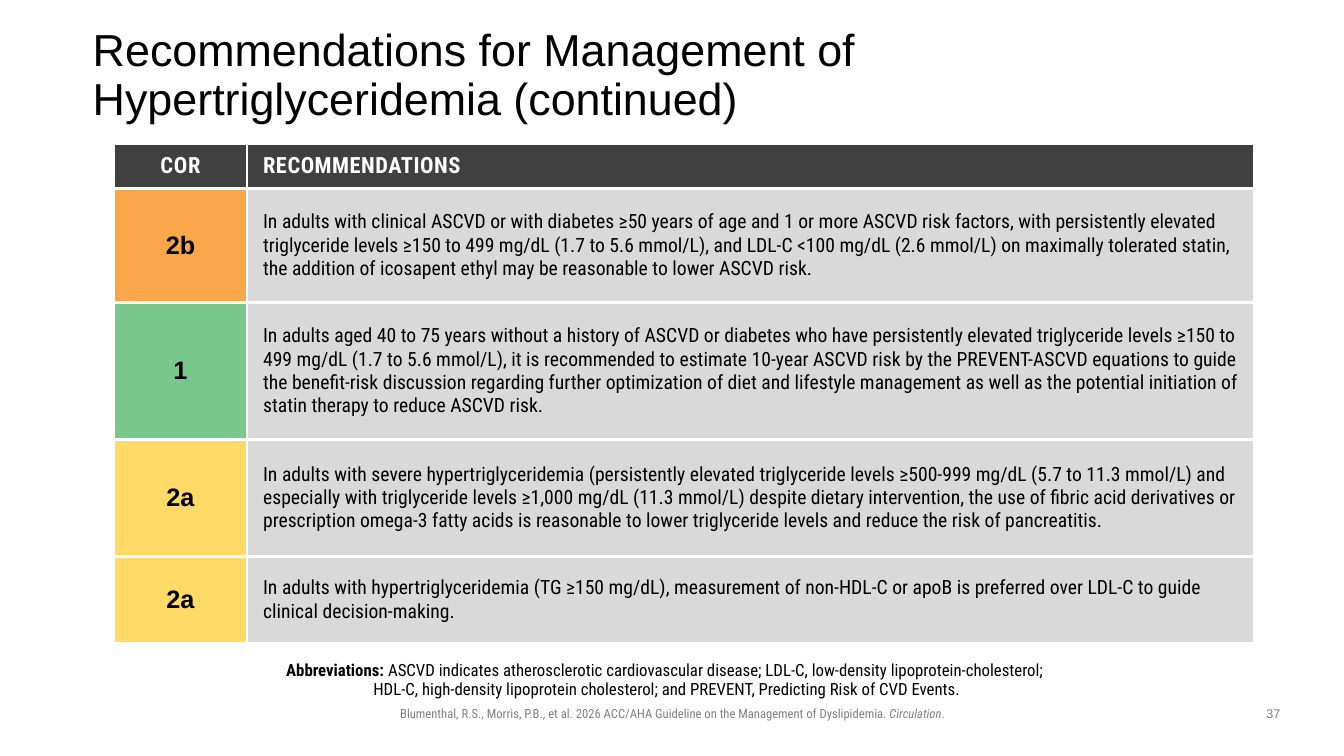
from lxml import etree
from pptx import Presentation
from pptx import util as u
from pptx.dml.color import RGBColor
from pptx.enum import text
from pptx.oxml.ns import qn

COLORS = {"black": "000000", "white": "FFFFFF", "gray": "808080", "header": "404040",
          "body": "D9D9D9", "2b": "FAA74B", "1": "79C78D", "2a": "FFDA68"}
CONDENSED = "Roboto Condensed"

TITLE = "Recommendations for Management of Hypertriglyceridemia (continued)"
HEADERS = ["COR", "RECOMMENDATIONS"]
RECOMMENDATIONS = [
    ("2b", "In adults with clinical ASCVD or with diabetes ≥50 years of age and 1 or more ASCVD risk "
           "factors, with persistently elevated triglyceride levels ≥150 to 499 mg/dL (1.7 to 5.6 mmol/L), "
           "and LDL-C <100 mg/dL (2.6 mmol/L) on maximally tolerated statin, the addition of icosapent "
           "ethyl may be reasonable to lower ASCVD risk."),
    ("1", "In adults aged 40 to 75 years without a history of ASCVD or diabetes who have persistently "
          "elevated triglyceride levels ≥150 to 499 mg/dL (1.7 to 5.6 mmol/L), it is recommended to "
          "estimate 10-year ASCVD risk by the PREVENT-ASCVD equations to guide the benefit-risk discussion "
          "regarding further optimization of diet and lifestyle management as well as the potential "
          "initiation of statin therapy to reduce ASCVD risk."),
    ("2a", "In adults with severe hypertriglyceridemia (persistently elevated triglyceride levels ≥500-999 "
           "mg/dL (5.7 to 11.3 mmol/L) and especially with triglyceride levels ≥1,000 mg/dL (11.3 mmol/L) "
           "despite dietary intervention, the use of fibric acid derivatives or prescription omega-3 fatty "
           "acids is reasonable to lower triglyceride levels and reduce the risk of pancreatitis."),
    ("2a", "In adults with hypertriglyceridemia (TG ≥150 mg/dL), measurement of non-HDL-C or apoB is "
           "preferred over LDL-C to guide clinical decision-making."),
]
ABBREVIATIONS = [
    ("Abbreviations: ", {"bold": True}),
    ("ASCVD indicates atherosclerotic cardiovascular disease; LDL-C, low-density lipoprotein-cholesterol; "
     "\vHDL-C, high-density lipoprotein cholesterol; and PREVENT, Predicting Risk of CVD Events.", {}),
]
CITATION = [
    ("Blumenthal, R.S., Morris, P.B., et al. 2026 ACC/AHA Guideline on the Management of Dyslipidemia. ", {}),
    ("Circulation", {"italic": True}),
    (".", {}),
]
PAGE_NUMBER = "37"

COLUMN_WIDTHS = [1.32, 9.99]
ROW_HEIGHTS = [0.45, 1.13, 1.36, 1.16, 0.86]
CENTER = {"alignment": text.PP_ALIGN.CENTER}
SIDES = ("left", "top", "right", "bottom")


def set_all(target, values):
    for name, value in values.items():
        setattr(target, name, value)


def write(paragraph, runs, size, font, color, layout, bold=False, tracking=0, indent=0):
    set_all(paragraph, layout)
    if indent:
        properties = paragraph._p.get_or_add_pPr()
        properties.set("marL", str(u.Inches(indent)))
        properties.set("indent", "0")
    for words, style in runs:
        for position, line in enumerate(words.split("\v")):
            if position:
                paragraph.add_line_break()
            run = paragraph.add_run()
            run.text = line
            set_all(run.font, {"size": u.Pt(size), "name": font, "bold": bold, **style})
            run.font.color.rgb = RGBColor.from_string(COLORS[color])
            if tracking:
                run._r.get_or_add_rPr().set("spc", str(int(tracking * 100)))


def add_text(slide, box, runs, size, font, color, layout,
             anchor=text.MSO_ANCHOR.TOP, insets=(0.1, 0.05, 0.1, 0.05)):
    frame = slide.shapes.add_textbox(*map(u.Inches, box)).text_frame
    set_all(frame, {"word_wrap": True, "vertical_anchor": anchor})
    set_all(frame, {f"margin_{side}": u.Inches(inset) for side, inset in zip(SIDES, insets)})
    write(frame.paragraphs[0], runs, size, font, color, layout)


def add_borders(cell):
    properties = cell._tc.get_or_add_tcPr()
    for position, tag in enumerate(("a:lnL", "a:lnR", "a:lnT", "a:lnB")):
        line = etree.Element(qn(tag), w=str(u.Pt(2.25)))
        fill = etree.SubElement(line, qn("a:solidFill"))
        etree.SubElement(fill, qn("a:srgbClr"), val=COLORS["white"])
        properties.insert(position, line)


def fill_cell(cell, words, fill, inset, **style):
    cell.fill.solid()
    cell.fill.fore_color.rgb = RGBColor.from_string(COLORS[fill])
    cell.vertical_anchor = text.MSO_ANCHOR.MIDDLE
    if inset:
        set_all(cell, {f"margin_{side}": u.Inches(inset) for side in SIDES})
    add_borders(cell)
    write(cell.text_frame.paragraphs[0], [(words, {})], **style)


def add_recommendations(slide):
    box = (1.13, 1.42, sum(COLUMN_WIDTHS), sum(ROW_HEIGHTS))
    table = slide.shapes.add_table(len(ROW_HEIGHTS), len(COLUMN_WIDTHS), *map(u.Inches, box)).table
    set_all(table, {"first_row": False, "horz_banding": False})
    for column, width in zip(table.columns, COLUMN_WIDTHS):
        column.width = u.Inches(width)
    for row, height in zip(table.rows, ROW_HEIGHTS):
        row.height = u.Inches(height)

    header = {"size": 16, "font": CONDENSED, "color": "white", "bold": True}
    fill_cell(table.cell(0, 0), HEADERS[0], "header", 0, layout=CENTER, tracking=0.5, **header)
    fill_cell(table.cell(0, 1), HEADERS[1], "header", 0, layout={}, tracking=0.4, indent=0.06, **header)
    for row, (grade, advice) in enumerate(RECOMMENDATIONS, 1):
        fill_cell(table.cell(row, 0), grade, grade, 0.05, size=18, font="Arial", color="black",
                  bold=True, layout=CENTER)
        fill_cell(table.cell(row, 1), advice, "body", 0.04, size=14, font=CONDENSED, color="black",
                  indent=0.12, layout={})


def main():
    presentation = Presentation()
    set_all(presentation, {"slide_width": u.Inches(13.33), "slide_height": u.Inches(7.5)})
    slide = presentation.slides.add_slide(presentation.slide_layouts[6])
    add_text(slide, (2.36, 6.95, 8.62, 0.25), CITATION, 9, CONDENSED, "gray", CENTER)
    add_text(slide, (0.92, 0.4, 11.5, 0.72), [(TITLE, {})], 32, "Arial", "black",
             {"line_spacing": 0.9}, text.MSO_ANCHOR.MIDDLE, (0, 0, 0, 0))
    add_recommendations(slide)
    add_text(slide, (1.88, 6.67, 9.57, 0.31), ABBREVIATIONS, 12, CONDENSED, "black",
             {**CENTER, "line_spacing": 0.9}, text.MSO_ANCHOR.BOTTOM, (0, 0.05, 0.1, 0.05))
    add_text(slide, (12.42, 6.95, 0.42, 0.26), [(PAGE_NUMBER, {})], 9, "Arial", "gray", CENTER)
    presentation.save("out.pptx")


if __name__ == "__main__":
    main()
